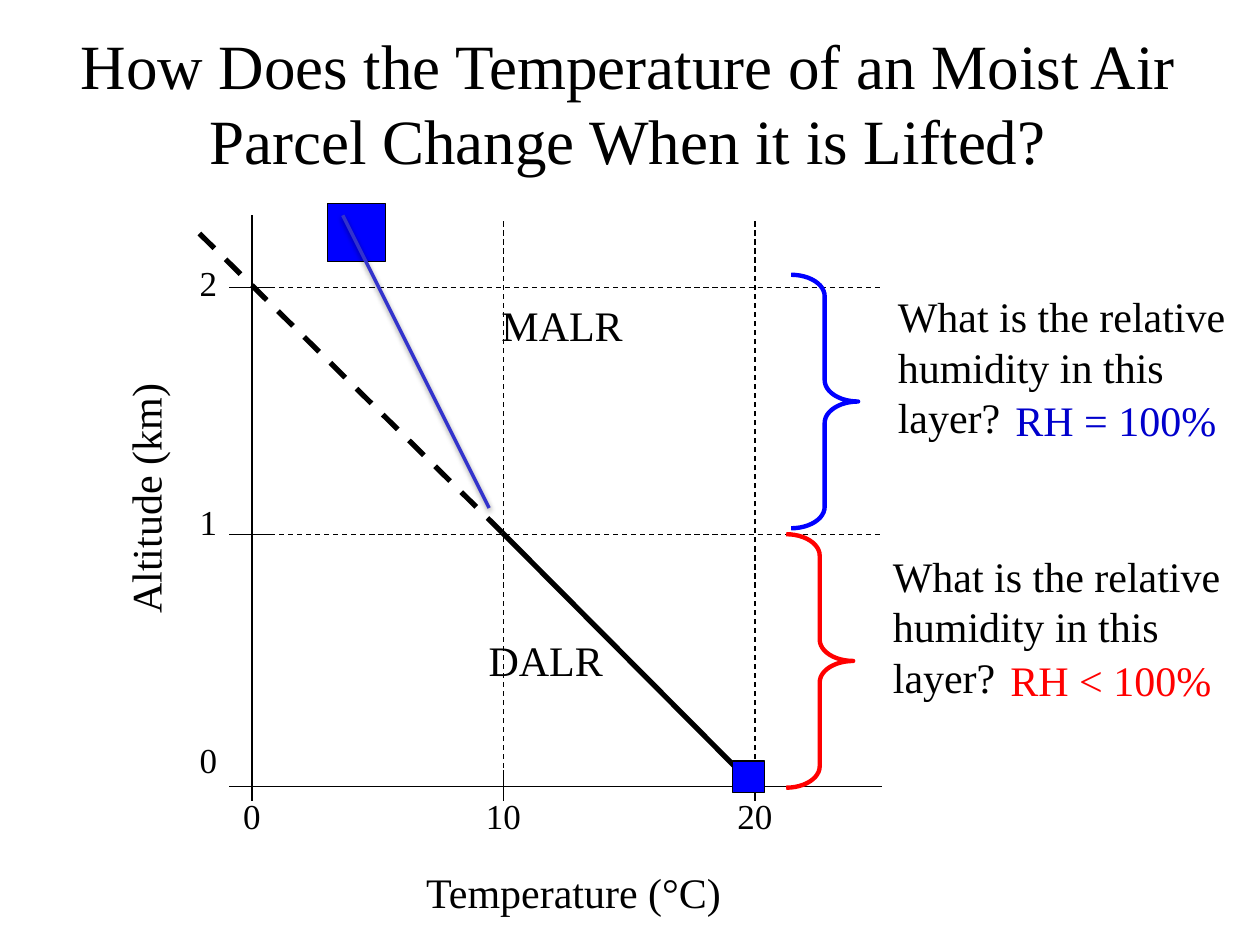
from lxml import etree
from pptx import Presentation
from pptx.dml.color import RGBColor
from pptx.enum.dml import MSO_LINE
from pptx.enum.shapes import MSO_CONNECTOR, MSO_SHAPE
from pptx.enum.text import MSO_ANCHOR, MSO_AUTO_SIZE, PP_ALIGN
from pptx.oxml.ns import qn
from pptx.util import Cm, Pt

STRAIGHT = MSO_CONNECTOR.STRAIGHT
DASH = MSO_LINE.DASH
RECTANGLE, RIGHT_BRACE = MSO_SHAPE.RECTANGLE, MSO_SHAPE.RIGHT_BRACE
LEFT, CENTER = PP_ALIGN.LEFT, PP_ALIGN.CENTER
TOP, MIDDLE = MSO_ANCHOR.TOP, MSO_ANCHOR.MIDDLE
NO_AUTOFIT = MSO_AUTO_SIZE.NONE
FONT = "Times New Roman"
BLACK, BLUE, RED = "000000", "0000FF", "FF0000"
ANSWER_BLUE, MOIST_BLUE = "0000CC", "3333CC"
QUESTION = "What is the relative humidity in this layer?"


def color(hex_value):
    """Turn a hex string into a colour."""
    return RGBColor.from_string(hex_value)


def write(shape, text, size=24, ink=BLACK, align=LEFT, anchor=TOP):
    """Put one formatted paragraph into a shape."""
    frame = shape.text_frame
    frame.word_wrap = True
    frame.auto_size = NO_AUTOFIT
    frame.vertical_anchor = anchor
    paragraph = frame.paragraphs[0]
    paragraph.alignment = align
    run = paragraph.add_run()
    run.text = text
    run.font.name, run.font.size = FONT, Pt(size)
    run.font.color.rgb = color(ink)


def add_label(shapes, text, left, top, width, height=1.27, rotation=0, **style):
    """Add a text box with formatted text."""
    label = shapes.add_textbox(Cm(left), Cm(top), Cm(width), Cm(height))
    label.rotation = rotation
    write(label, text, **style)


def add_line(shapes, start, end, width=0.75, ink=BLACK, dash=None, shadow=False):
    """Draw a straight line, optionally dashed or with a soft shadow."""
    line = shapes.add_connector(STRAIGHT, *(Cm(v) for v in (*start, *end)))
    line.line.color.rgb = color(ink)
    line.line.width = Pt(width)
    if dash:
        line.line.dash_style = dash
    effects = etree.SubElement(line._element.spPr, qn("a:effectLst"))
    if shadow:
        outer = etree.SubElement(effects, qn("a:outerShdw"), blurRad=str(Pt(3.1)),
                                 dist=str(Pt(1.6)), dir="5400000", rotWithShape="0")
        tint = etree.SubElement(outer, qn("a:srgbClr"), val=BLACK)
        etree.SubElement(tint, qn("a:alpha"), val="38000")


def add_parcel(shapes, left, top, side):
    """Draw an air parcel as a blue square."""
    parcel = shapes.add_shape(RECTANGLE, Cm(left), Cm(top), Cm(side), Cm(side))
    parcel.shadow.inherit = False
    parcel.fill.solid()
    parcel.fill.fore_color.rgb = color(BLUE)
    parcel.line.color.rgb = color(BLACK)
    parcel.line.width = Pt(0.75)


def build_title(slide, left, top, width, height):
    """Place and format the slide title."""
    title = slide.shapes.title
    title.left, title.top, title.width, title.height = map(Cm, (left, top, width, height))
    write(title, "How Does the Temperature of an Moist Air Parcel Change When it is Lifted?",
          size=36, align=CENTER, anchor=MIDDLE)


def build_axes(shapes, left, top, width, height):
    """Draw the axes, ticks, grid and axis labels."""
    base = top + height
    add_line(shapes, (left, top), (left, base))
    add_line(shapes, (left, base), (left + width, base))
    for index, temperature in enumerate(("0", "10", "20")):
        x = left + 5.07 * index
        add_line(shapes, (x, base - 0.33), (x, base + 0.3))
        if index:
            add_line(shapes, (x, base), (x, top + 0.08), dash=DASH)
        add_label(shapes, temperature, x - 1, base + 0.05, 2, 1.09, size=20, align=CENTER)
    levels = (("2", 1.45), ("1", 6.43), ("0", height))
    for index, (altitude, offset) in enumerate(levels):
        y = top + offset
        add_line(shapes, (left - 0.46, y), (left + 0.42, y))
        if offset < height:
            add_line(shapes, (left, y), (left + width - 0.05, y), dash=DASH)
        add_label(shapes, altitude, left - 1.63, top + 0.82 + 4.8 * index, 1.5, 1.09,
                  size=20, align=CENTER, anchor=MIDDLE)
    add_label(shapes, "Temperature (°C)", left - 0.46, base + 1.5, 13.89, align=CENTER)
    add_label(shapes, "Altitude (km)", left - 6.16, top + 5.08, 8, rotation=270, align=CENTER)


def build_lapse_rates(shapes, left, top):
    """Draw the dry and moist lapse rates with their air parcels."""
    condensation = (left + 5.05, top + 6.4)
    add_line(shapes, condensation, (left - 1.27, top + 0.16), width=3, dash=DASH)
    add_line(shapes, (left + 10.13, top + 11.51), condensation, width=3)
    add_label(shapes, "MALR", left + 4.78, top + 1.58, 3.45)
    add_label(shapes, "DALR", left + 4.52, top + 8.33, 3.45)
    add_parcel(shapes, left + 9.69, top + 11, 0.64)
    add_parcel(shapes, left + 1.52, top - 0.23, 1.17)
    add_line(shapes, (left + 4.78, top + 5.9), (left + 1.83, top),
             width=2, ink=MOIST_BLUE, shadow=True)


def build_layer(shapes, left, top, brace_ink, answer, answer_ink):
    """Bracket one layer and pose its humidity question with the answer."""
    layer = shapes.add_group_shape().shapes
    brace = layer.add_shape(RIGHT_BRACE, Cm(left), Cm(top), Cm(1.35), Cm(5.11))
    brace.adjustments[0], brace.adjustments[1] = 0.32, 0.5
    brace.shadow.inherit = False
    brace.fill.background()
    brace.line.color.rgb = color(brace_ink)
    brace.line.width = Pt(2.5)
    add_label(layer, QUESTION, left + 1.9, top + 0.2, 7.45, 3.3)
    add_label(shapes, answer, left + 4.27, top + 2.29, 4.8, ink=answer_ink)


def main():
    """Build and save the slide."""
    deck = Presentation()
    deck.slide_width, deck.slide_height = Cm(25.4), Cm(19.05)
    slide = deck.slides.add_slide(deck.slide_layouts[5])
    shapes = slide.shapes
    plot_left, plot_top = 5.08, 4.34
    build_title(slide, 1.19, 0.46, 22.94, 3.18)
    build_axes(shapes, plot_left, plot_top, 12.7, 11.51)
    build_layer(shapes, 15.85, 10.77, RED, "RH < 100%", RED)
    build_layer(shapes, 15.95, 5.54, BLUE, "RH = 100%", ANSWER_BLUE)
    build_lapse_rates(shapes, plot_left, plot_top)
    deck.save("out.pptx")


if __name__ == "__main__":
    main()
